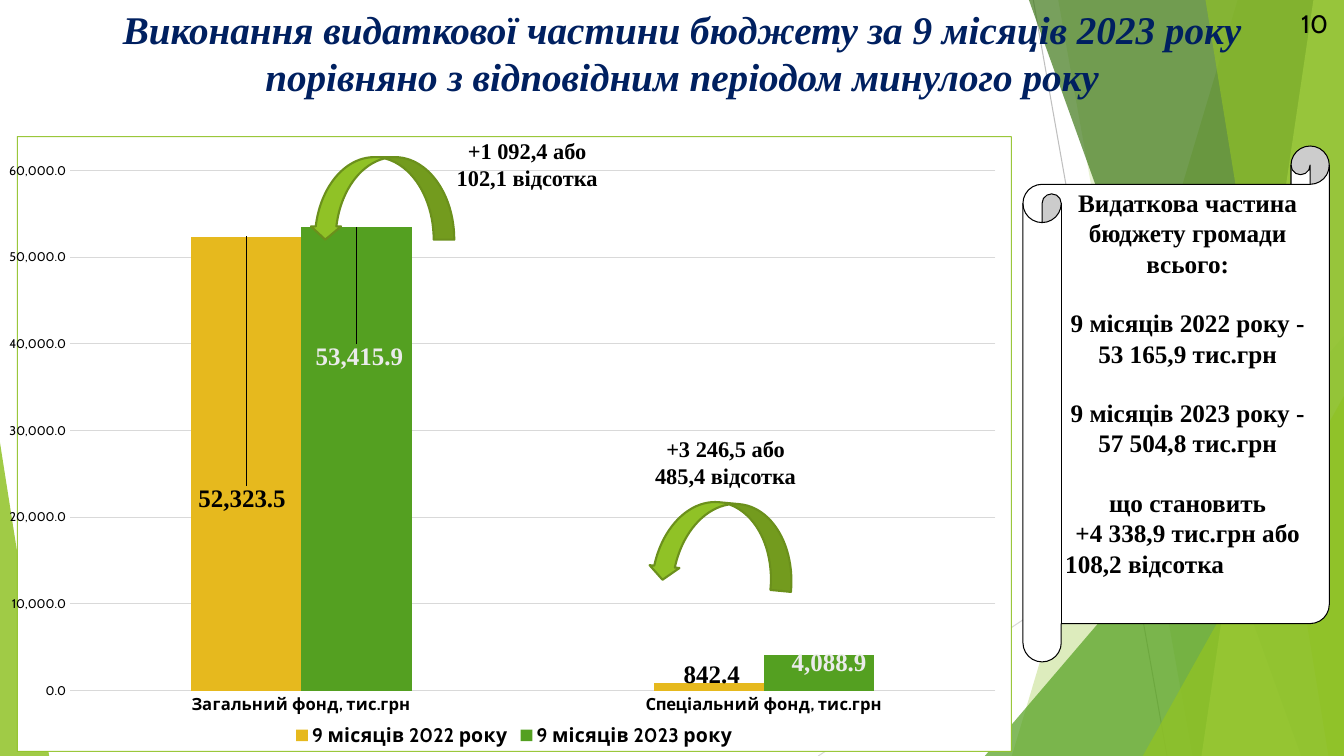
from lxml import etree
from pptx import Presentation
from pptx.chart.data import CategoryChartData as ChartData
from pptx.dml.color import RGBColor as Rgb
from pptx.enum.chart import XL_CHART_TYPE as Kind, XL_LABEL_POSITION as Spot
from pptx.enum.chart import XL_LEGEND_POSITION as Side, XL_TICK_MARK as Tick
from pptx.enum.shapes import MSO_CONNECTOR as Link, MSO_SHAPE as Form
from pptx.enum.text import MSO_ANCHOR as Anchor, PP_ALIGN as Align
from pptx.oxml import parse_xml
from pptx.oxml.ns import nsdecls, qn
from pptx.util import Cm, Pt

WIDE, HIGH = 33.87, 19.05
SERIF, SANS = "Times New Roman", "Cabin"
COLORS = {
    "lime": "90C226", "green": "54A021", "forest": "3F7819", "pale": "C0E474",
    "gold": "E6B91E", "olive": "6B901C", "navy": "002060", "black": "000000",
    "white": "FFFFFF", "mist": "EBEBEB", "grey": "BFBFBF", "silver": "D9D9D9",
}

TITLE = ("Виконання видаткової частини бюджету за 9 місяців 2023 року "
         "порівняно з відповідним періодом минулого року")
FUNDS = ["Загальний фонд, тис.грн", "Спеціальний фонд, тис.грн"]
# name, values, bar colour, label colour, label shifts (share of chart size)
SERIES = [
    ("9 місяців 2022 року", (52323.5, 842.4), "gold", "black",
     ((-0.004, 0.455), (0.003, 0.015))),
    ("9 місяців 2023 року", (53415.9, 4088.9), "green", "mist",
     ((0.003, 0.239), (0.01, 0.042))),
]
# text, box
NOTES = [
    ("+1 092,4 або 102,1 відсотка", (11.1, 3.25, 4.37, 1.75)),
    ("+3 246,5 або 485,4 відсотка", (16.15, 10.77, 4.27, 1.75)),
]
# left, top, turn
ARROWS = [(7.82, 3.96, 0), (16.41, 12.67, 5.4)]
# text, gap above in points, alignment
TOTALS = [
    ("Видаткова частина бюджету громади всього:", 0, Align.CENTER),
    ("9 місяців 2022 року - 53 165,9 тис.грн", 21, Align.CENTER),
    ("9 місяців 2023 року - 57 504,8 тис.грн", 21, Align.CENTER),
    ("що становить", 21, Align.CENTER),
    ("+4 338,9 тис.грн або", 0, Align.CENTER),
    ("108,2 відсотка", 0, Align.LEFT),
]
RAYS = [((26.04, 0), (29.41, HIGH), "grey"), ((WIDE, 10.24), (20.62, HIGH), "silver")]
# bands: top x, bottom x; wedges: left, top, width, apex
FACETS = [
    ("band", (31.19, 25.5), "lime", 30),
    ("band", (26.67, 30.05), "lime", 20),
    ("wedge", (24.82, 8.46, 9.05, 1), "green", 72),
    ("band", (25.93, 32.79), "forest", 70),
    ("band", (33.1, 30.28), "pale", 70),
    ("band", (30.38, 33.48), "lime", 65),
    ("wedge", (28.8, 9.98, 5.07, 1), "lime", 80),
    ("wedge", (0, 11.15, 1.24, 0), "lime", 85),
]

deck = Presentation()
deck.slide_width, deck.slide_height = Cm(WIDE), Cm(HIGH)
slide = deck.slides.add_slide(deck.slide_layouts[6])
shapes = slide.shapes


def tint(name):
    return Rgb.from_string(COLORS[name])


def paint(shape, color, edge=None, width=0.75, alpha=100):
    shape.shadow.inherit = False
    shape.fill.solid()
    shape.fill.fore_color.rgb = tint(color)
    if alpha < 100:
        tone = shape.fill._xPr.find(".//" + qn("a:srgbClr"))
        etree.SubElement(tone, qn("a:alpha"), val=str(alpha * 1000))
    if edge:
        shape.line.color.rgb = tint(edge)
        shape.line.width = Pt(width)
    else:
        shape.line.fill.background()


def style(font, size, color="black", face=SERIF, bold=True, italic=False):
    font.size, font.name, font.bold, font.italic = Pt(size), face, bold, italic
    font.color.rgb = tint(color)


def write(box, text, size, align=Align.CENTER, anchor=Anchor.TOP, **look):
    area = shapes.add_textbox(*map(Cm, box)).text_frame
    area.word_wrap, area.vertical_anchor = True, anchor
    area.text = text
    line = area.paragraphs[0]
    line.alignment = align
    style(line.runs[0].font, size, **look)


def place(x, y):
    """Manual layout element, completed by the caller where needed."""
    return parse_xml(
        f'<c:layout {nsdecls("c")}><c:manualLayout>'
        f'<c:x val="{x}"/><c:y val="{y}"/></c:manualLayout></c:layout>')


def draw_back():
    for start, end, color in RAYS:
        ray = shapes.add_connector(Link.STRAIGHT, *map(Cm, start + end))
        ray.line.color.rgb, ray.line.width = tint(color), Pt(0.75)
        etree.SubElement(ray._element.spPr, qn("a:effectLst"))
    for kind, spot, color, alpha in FACETS:
        if kind == "band":
            top, low = spot
            pen = shapes.build_freeform(Cm(top), 0)
            pen.add_line_segments(
                [(Cm(x), Cm(y)) for x, y in ((WIDE, 0), (WIDE, HIGH), (low, HIGH))])
            facet = pen.convert_to_shape()
        else:
            left, top, width, apex = spot
            facet = shapes.add_shape(Form.ISOSCELES_TRIANGLE, Cm(left), Cm(top),
                                     Cm(width), Cm(HIGH - top))
            facet.adjustments[0] = apex
        paint(facet, color, alpha=alpha)


def draw_chart():
    data = ChartData(number_format="#,##0.0")
    data.categories = FUNDS
    for name, values, *_ in SERIES:
        data.add_series(name, values)
    chart = shapes.add_chart(Kind.COLUMN_CLUSTERED, Cm(0.23), Cm(3.43),
                             Cm(25.27), Cm(15.52), data).chart
    chart.has_title = False
    style(chart.font, 10, face=SANS, bold=False)
    chart.has_legend = True
    chart.legend.position, chart.legend.include_in_layout = Side.BOTTOM, False
    style(chart.legend.font, 14, face=SANS)

    funds, sums = chart.category_axis, chart.value_axis
    for axis, size, bold in ((funds, 12, True), (sums, 9, False)):
        axis.major_tick_mark = axis.minor_tick_mark = Tick.NONE
        style(axis.tick_labels.font, size, face=SANS, bold=bold)
    sums.minimum_scale, sums.maximum_scale, sums.major_unit = 0, 60000, 10000
    sums.tick_labels.number_format = "#,##0.0"
    sums.tick_labels.number_format_is_linked = False
    sums.format.line.fill.background()
    for line in (funds.format.line, sums.major_gridlines.format.line):
        line.color.rgb, line.width = tint("silver"), Pt(0.75)

    plot = chart.plots[0]
    plot.gap_width, plot.overlap, plot.vary_by_categories = 219, 0, False
    for bars, (_, _, color, ink, shifts) in zip(plot.series, SERIES):
        bars.format.fill.solid()
        bars.format.fill.fore_color.rgb = tint(color)
        for i, shift in enumerate(shifts):
            label = bars.points[i].data_label
            style(label.font, 18, ink)
            label.position = Spot.OUTSIDE_END
        for mark, shift in zip(bars._element.iter(qn("c:dLbl")), shifts):
            mark.find(qn("c:idx")).addnext(place(*shift))

    root = chart._chartSpace
    area = root.find(".//" + qn("c:plotArea"))
    for old in area.findall(qn("c:layout")):
        area.remove(old)
    frame = place(0.053, 0.055)
    rule = frame[0]
    for i, (tag, val) in enumerate((("layoutTarget", "inner"), ("xMode", "edge"),
                                    ("yMode", "edge"))):
        rule.insert(i, rule.makeelement(qn("c:" + tag), {"val": val}))
    for tag, val in (("w", "0.931"), ("h", "0.846")):
        etree.SubElement(rule, qn("c:" + tag), val=val)
    area.insert(0, frame)
    root.find(qn("c:chart")).addnext(parse_xml(
        f'<c:spPr {nsdecls("c", "a")}><a:solidFill><a:srgbClr val="{COLORS["white"]}"/>'
        f'</a:solidFill><a:ln w="9525"><a:solidFill><a:srgbClr val="{COLORS["lime"]}">'
        '<a:alpha val="90000"/></a:srgbClr></a:solidFill></a:ln></c:spPr>'))


def draw_arrows():
    for left, top, turn in ARROWS:
        arrow = shapes.add_shape(Form.CURVED_DOWN_ARROW, Cm(left), Cm(top), Cm(3.63), Cm(2.08))
        for i, share in enumerate((0.25, 0.364, 0.161)):
            arrow.adjustments[i] = share
        arrow.rotation = turn
        arrow._element.spPr.find(qn("a:xfrm")).set("flipH", "1")
        paint(arrow, "lime", "olive", 1.5)


def draw_scroll():
    scroll = shapes.add_shape(Form.HORIZONTAL_SCROLL, Cm(25.78), Cm(3.68), Cm(7.72), Cm(13))
    scroll.adjustments[0] = 0.125
    paint(scroll, "white", "black")
    area = scroll.text_frame
    area.word_wrap, area.vertical_anchor = True, Anchor.TOP
    area.margin_left, area.margin_top = Cm(0.1), Cm(0.08)
    area.margin_right = area.margin_bottom = 0
    area.text = "\n".join(text for text, *_ in TOTALS)
    for line, (_, gap, align) in zip(area.paragraphs, TOTALS):
        line.alignment, line.space_before = align, Pt(gap)
        style(line.runs[0].font, 18)


draw_back()
write((0.86, 0, 32.66, 3.66), TITLE, 28, color="navy", italic=True)
draw_chart()
draw_arrows()
for text, box in NOTES:
    write(box, text, 16, anchor=Anchor.MIDDLE)
draw_scroll()
write((32.54, 0.08, 1.27, 1.02), "10", 18, Align.LEFT, face=SANS, bold=False)
deck.save("out.pptx")
